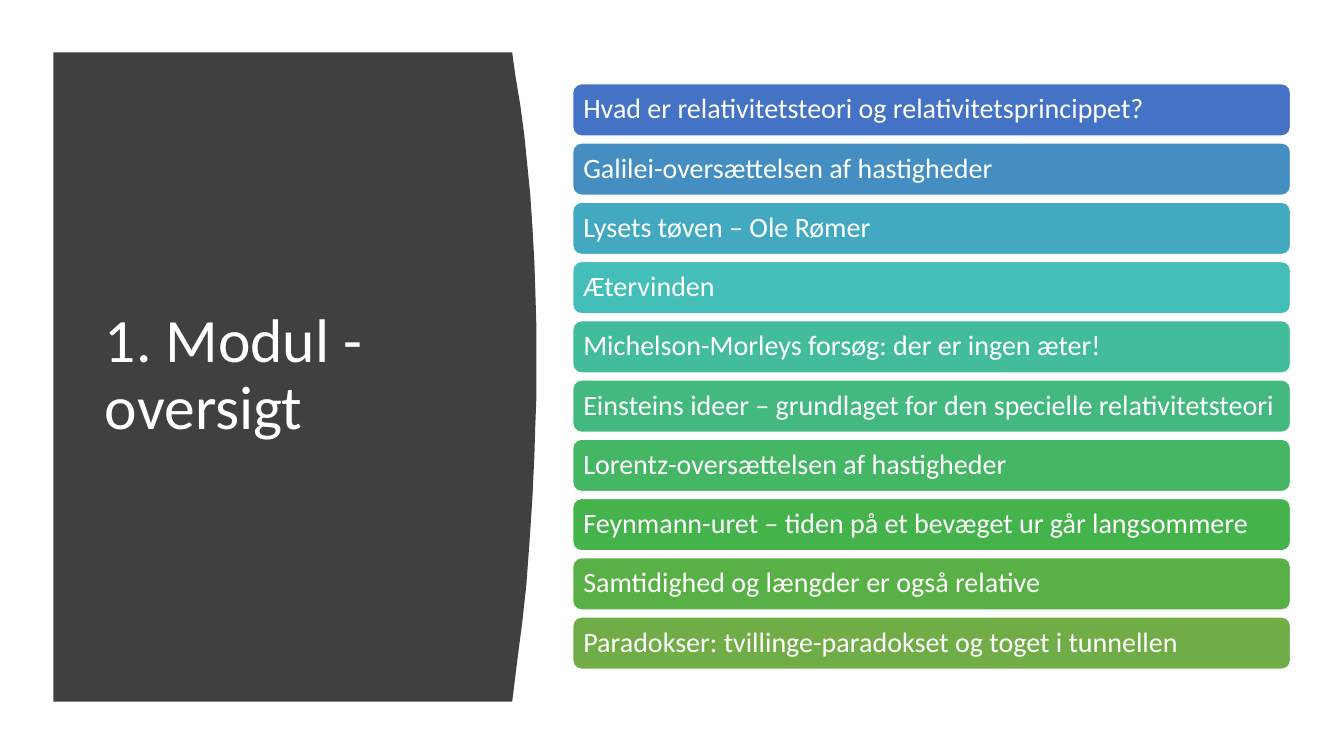
"""Build the overview slide of module 1 on the theory of relativity."""
from pptx import Presentation
from pptx.dml.color import RGBColor
from pptx.enum.shapes import MSO_SHAPE as Shape
from pptx.enum.text import MSO_ANCHOR as Anchor, MSO_AUTO_SIZE as AutoSize, PP_ALIGN as Align
from pptx.util import Inches, Pt

WHITE = RGBColor(0xFF, 0xFF, 0xFF)
CHARCOAL = RGBColor(0x40, 0x40, 0x40)
FONT = "Calibri"

TOPICS = [
    ("Hvad er relativitetsteori og relativitetsprincippet?", RGBColor(0x44, 0x72, 0xC4)),
    ("Galilei-oversættelsen af hastigheder", RGBColor(0x44, 0x8E, 0xC2)),
    ("Lysets tøven – Ole Rømer", RGBColor(0x43, 0xA9, 0xC0)),
    ("Ætervinden", RGBColor(0x43, 0xBE, 0xB9)),
    ("Michelson-Morleys forsøg: der er ingen æter!", RGBColor(0x43, 0xBC, 0x9C)),
    ("Einsteins ideer – grundlaget for den specielle relativitetsteori", RGBColor(0x44, 0xB9, 0x7F)),
    ("Lorentz-oversættelsen af hastigheder", RGBColor(0x45, 0xB6, 0x64)),
    ("Feynmann-uret – tiden på et bevæget ur går langsommere", RGBColor(0x45, 0xB3, 0x4B)),
    ("Samtidighed og længder er også relative", RGBColor(0x59, 0xB0, 0x46)),
    ("Paradokser: tvillinge-paradokset og toget i tunnellen", RGBColor(0x70, 0xAD, 0x47)),
]
PANEL_LEFT, PANEL_TOP, PANEL_BOTTOM = 0.53, 0.52, 6.96
PANEL_CURVE = [
    (5.08, PANEL_TOP), (5.11, 0.74), (5.16, 1.04), (5.2, 1.34), (5.23, 1.64),
    (5.26, 1.94), (5.28, 2.24), (5.3, 2.6), (5.31, 2.9), (5.32, 3.25),
    (5.32, 3.94), (5.31, 4.2), (5.3, 4.52), (5.28, 4.95), (5.25, 5.4),
    (5.22, 5.81), (5.18, 6.17), (5.14, 6.48), (5.11, 6.72), (5.08, PANEL_BOTTOM),
]
BAR_LEFT, BAR_TOP, BAR_WIDTH, BAR_HEIGHT = 5.68, 0.83, 7.12, 0.52
BAR_PITCH = (6.12 - BAR_TOP) / (len(TOPICS) - 1)


def style_text(frame, size):
    frame.word_wrap = True
    frame.auto_size = AutoSize.NONE
    frame.vertical_anchor = Anchor.MIDDLE
    paragraph = frame.paragraphs[0]
    paragraph.alignment = Align.LEFT
    paragraph.line_spacing = 0.9
    font = paragraph.runs[0].font
    font.name = FONT
    font.size = Pt(size)
    font.color.rgb = WHITE


prs = Presentation()
prs.slide_width = Inches(13.33)
prs.slide_height = Inches(7.5)
slide = prs.slides.add_slide(prs.slide_layouts[5])

title = slide.shapes.title
title.left, title.top = Inches(0.94), Inches(1.11)
title.width, title.height = Inches(3.74), Inches(5.24)
title.text_frame.text = "1. Modul - oversigt"
style_text(title.text_frame, 44)

outline = slide.shapes.build_freeform(Inches(PANEL_LEFT), Inches(PANEL_TOP))
outline.add_line_segments(
    [(Inches(x), Inches(y)) for x, y in PANEL_CURVE + [(PANEL_LEFT, PANEL_BOTTOM)]], close=True
)
panel = outline.convert_to_shape()
panel.shadow.inherit = False
panel.fill.solid()
panel.fill.fore_color.rgb = CHARCOAL
panel.line.fill.background()
title.element.addprevious(panel.element)

for row, (topic, color) in enumerate(TOPICS):
    bar = slide.shapes.add_shape(
        Shape.ROUNDED_RECTANGLE,
        Inches(BAR_LEFT), Inches(BAR_TOP + row * BAR_PITCH), Inches(BAR_WIDTH), Inches(BAR_HEIGHT),
    )
    bar.shadow.inherit = False
    bar.fill.solid()
    bar.fill.fore_color.rgb = color
    bar.line.color.rgb = WHITE
    bar.line.width = Pt(1)
    label = bar.text_frame
    label.margin_left = label.margin_right = Inches(0.08)
    label.margin_top = label.margin_bottom = Inches(0.08)
    label.text = topic
    style_text(label, 20)

prs.save("out.pptx")
